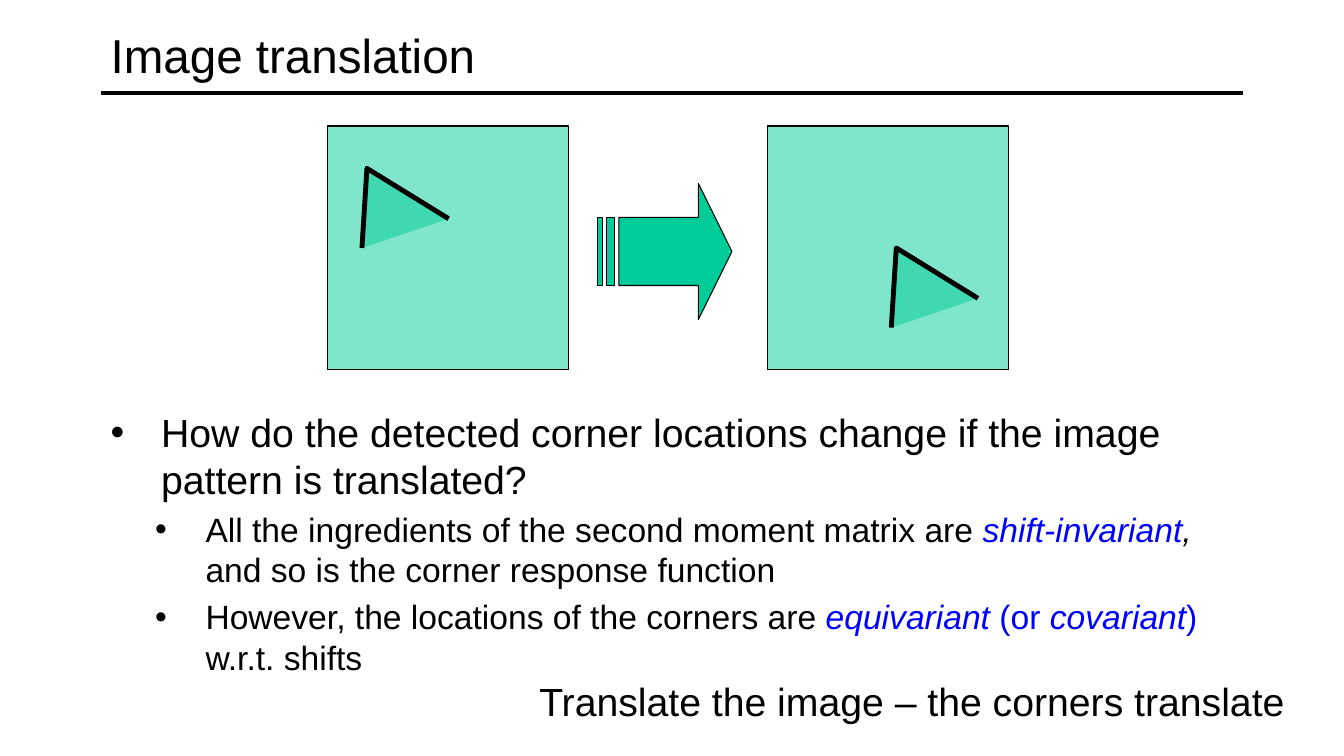
from dataclasses import dataclass

from lxml.etree import SubElement
from pptx import Presentation
from pptx.dml.color import RGBColor
from pptx.enum.shapes import MSO_CONNECTOR, MSO_SHAPE
from pptx.enum.text import MSO_ANCHOR, MSO_AUTO_SIZE
from pptx.oxml.ns import qn
from pptx.util import Inches, Pt


@dataclass(frozen=True)
class Theme:
    """Hold the colours, font and type sizes."""
    black: RGBColor = RGBColor(0, 0, 0)
    blue: RGBColor = RGBColor(0, 0, 255)
    green: RGBColor = RGBColor(0, 0xCC, 0x99)
    font: str = "Arial"
    title: int = 34
    body: int = 28
    sub: int = 24


THEME = Theme()
POINTS = [
    (0, [("How do the detected corner locations change if the image "
          "pattern is translated?", False, THEME.black)]),
    (1, [("All the ingredients of the second moment matrix are ", False, THEME.black),
         ("shift-invariant", True, THEME.blue),
         (", ", True, THEME.black),
         ("and so is the corner response function", False, THEME.black)]),
    (1, [("However, the locations of the corners are ", False, THEME.black),
         ("equivariant", True, THEME.blue),
         (" (or ", False, THEME.blue),
         ("covariant", True, THEME.blue),
         (") ", False, THEME.blue),
         ("w.r.t. shifts", False, THEME.black)]),
]


def style(run, size, color=THEME.black, italic=False):
    """Set the font of a run."""
    font = run.font
    font.name = THEME.font
    font.size = Pt(size)
    font.color.rgb = color
    font.italic = italic


def add_frame(slide, left, top, width, height):
    """Add a wrapping text box and return its frame."""
    box = slide.shapes.add_textbox(
        Inches(left), Inches(top), Inches(width), Inches(height))
    box.text_frame.word_wrap = True
    return box.text_frame


def add_label(slide, text, size, *place):
    """Add one line of text and return its frame."""
    frame = add_frame(slide, *place)
    frame.text = text
    style(frame.paragraphs[0].runs[0], size)
    return frame


def set_bullet(para, level, size):
    """Give a paragraph its bullet, hanging indent and gap."""
    para.level = level
    para.space_before = Pt(0.2 * size)
    props = para._p.get_or_add_pPr()
    props.set("marL", str(Inches((0.5, 0.94)[level])))
    props.set("indent", str(Inches(-0.5)))
    SubElement(props, qn("a:buFont"), typeface=THEME.font)
    SubElement(props, qn("a:buChar"), char="•")


def add_points(slide, points, *place):
    """Add the bulleted text."""
    frame = add_frame(slide, *place)
    for index, (level, parts) in enumerate(points):
        para = frame.add_paragraph() if index else frame.paragraphs[0]
        size = (THEME.body, THEME.sub)[level]
        set_bullet(para, level, size)
        for text, italic, color in parts:
            run = para.add_run()
            run.text = text
            style(run, size, color, italic)


def paint(shape, width, alpha=None):
    """Fill a shape green with a black line, see-through if asked."""
    shape.shadow.inherit = False
    shape.fill.solid()
    shape.fill.fore_color.rgb = THEME.green
    shape.line.color.rgb = THEME.black
    shape.line.width = Pt(width)
    if alpha:
        color = shape._element.spPr.find(qn("a:solidFill"))[0]
        SubElement(color, qn("a:alpha"), val=str(alpha * 1000))


def add_preset(slide, kind, left, top, width, height):
    """Add a preset shape."""
    return slide.shapes.add_shape(
        kind, Inches(left), Inches(top), Inches(width), Inches(height))


def add_panel(slide, left, corner):
    """Add an image panel with a corner whose tip is at the given point."""
    panel = add_preset(slide, MSO_SHAPE.RECTANGLE, left, 1.25, 2.39, 2.42)
    paint(panel, 0.75, 50)
    x, y = corner
    pen = slide.shapes.build_freeform(Inches(x - 0.05), Inches(y + 0.79))
    pen.add_line_segments(
        [(Inches(x), Inches(y)), (Inches(x + 0.81), Inches(y + 0.5))], close=False)
    paint(pen.convert_to_shape(), 3.5, 50)


def add_arrow(slide):
    """Add the striped arrow between the panels."""
    arrow = add_preset(slide, MSO_SHAPE.STRIPED_RIGHT_ARROW, 5.93, 1.82, 1.33, 1.35)
    arrow.adjustments[0] = 0.5
    arrow.adjustments[1] = 0.25
    paint(arrow, 0.75)


def add_rule(slide):
    """Add the line under the title."""
    rule = slide.shapes.add_connector(
        MSO_CONNECTOR.STRAIGHT, Inches(1), Inches(0.92), Inches(12.33), Inches(0.92))
    rule.line.color.rgb = THEME.black
    rule.line.width = Pt(3)
    SubElement(rule._element.spPr, qn("a:effectLst"))


def main():
    """Build and save the slide."""
    deck = Presentation()
    deck.slide_width, deck.slide_height = Inches(13.33), Inches(7.5)
    slide = deck.slides.add_slide(deck.slide_layouts[6])
    add_rule(slide)
    title = add_label(slide, "Image translation", THEME.title, 1, 0.08, 11.33, 0.92)
    title.vertical_anchor = MSO_ANCHOR.MIDDLE
    add_points(slide, POINTS, 1, 4, 11.33, 2.83)
    add_panel(slide, 3.25, (3.64, 1.67))
    add_arrow(slide)
    add_panel(slide, 7.61, (8.89, 2.46))
    note = add_label(slide, "Translate the image – the corners translate",
                     THEME.body, 5.25, 6.67, 7.69, 0.57)
    note.word_wrap = False
    note.auto_size = MSO_AUTO_SIZE.SHAPE_TO_FIT_TEXT
    deck.save("out.pptx")


if __name__ == "__main__":
    main()
